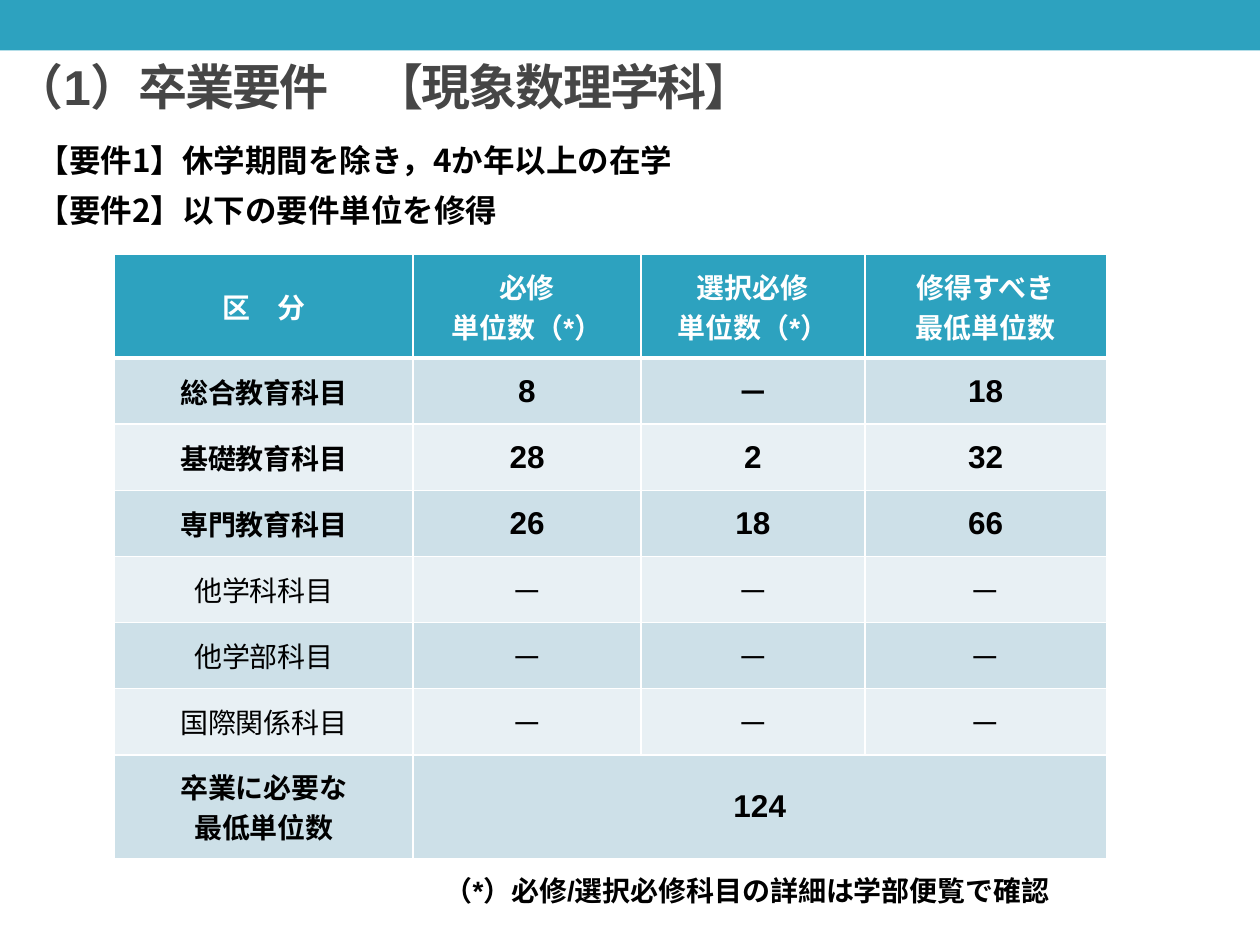
"""Build the slide on graduation requirements with its table of credits."""
from lxml import etree
from pptx import Presentation
from pptx import util as u
from pptx.dml.color import RGBColor
from pptx.enum import shapes, text
from pptx.oxml import ns

COLORS = {"teal": "2DA2BF", "title": "464646", "black": "000000",
          "white": "FFFFFF", "dark_band": "CDE0E8", "light_band": "E8F0F4"}
JAPANESE = "Noto Sans CJK JP"


def write(frame, content, size=16, color="black", bold=True, font="Arial",
          align=text.PP_ALIGN.LEFT, anchor=text.MSO_ANCHOR.TOP, spacing=None):
    frame.word_wrap = True
    frame.vertical_anchor = anchor
    for index, line in enumerate(content.split("\n")):
        paragraph = frame.add_paragraph() if index else frame.paragraphs[0]
        paragraph.alignment = align
        run = paragraph.add_run()
        run.text = line
        run.font.size = u.Pt(size)
        run.font.bold = bold
        run.font.name = font
        run.font.color.rgb = RGBColor.from_string(COLORS[color])
        properties = run.font._element
        etree.SubElement(properties, ns.qn("a:ea"), typeface=JAPANESE)
        if spacing is not None:
            properties.set("spc", str(spacing))


def add_borders(cell, bottom_width):
    properties = cell._tc.get_or_add_tcPr()
    widths = {"lnL": 1, "lnR": 1, "lnT": 1, "lnB": bottom_width}
    for position, (side, width) in enumerate(widths.items()):
        line = etree.Element(ns.qn(f"a:{side}"), w=str(u.Pt(width)))
        fill = etree.SubElement(line, ns.qn("a:solidFill"))
        etree.SubElement(fill, ns.qn("a:srgbClr"), val=COLORS["white"])
        properties.insert(position, line)


presentation = Presentation()
presentation.slide_width = u.Pt(720)
presentation.slide_height = u.Pt(540)
slide = presentation.slides.add_slide(presentation.slide_layouts[6])

banner = slide.shapes.add_shape(shapes.MSO_SHAPE.RECTANGLE, 0, 0, u.Pt(720), u.Pt(28.8))
banner.shadow.inherit = False
banner.fill.solid()
banner.fill.fore_color.rgb = RGBColor.from_string(COLORS["teal"])
banner.line.fill.background()

text_boxes = [
    ("（1）卒業要件　【現象数理学科】", (1.4, 25.9, 648, 46.8),
     dict(size=28, color="title", anchor=text.MSO_ANCHOR.MIDDLE, spacing=-100)),
    ("【要件1】休学期間を除き，4か年以上の在学", (14.4, 77, 623.5, 28.8),
     dict(size=18, font=JAPANESE)),
    ("【要件2】以下の要件単位を修得", (14.4, 105.8, 623.5, 28.8),
     dict(size=18, font=JAPANESE)),
    ("（*）必修/選択必修科目の詳細は学部便覧で確認", (247, 495.4, 459.4, 26.6), {}),
]
for content, box, style in text_boxes:
    shape = slide.shapes.add_textbox(*map(u.Pt, box))
    write(shape.text_frame, content, **style)

rows = [
    ("区　分", "必修\n単位数（*）", "選択必修\n単位数（*）", "修得すべき\n最低単位数"),
    ("総合教育科目", "8", "－", "18"),
    ("基礎教育科目", "28", "2", "32"),
    ("専門教育科目", "26", "18", "66"),
    ("他学科科目", "－", "－", "－"),
    ("他学部科目", "－", "－", "－"),
    ("国際関係科目", "－", "－", "－"),
    ("卒業に必要な\n最低単位数", "124", "", ""),
]
column_widths = [170.6, 130.1, 128, 138]
tall_row, short_row = 59.2, 37.8
last = len(rows) - 1
row_heights = [tall_row] + [short_row] * (last - 1) + [tall_row]
table = slide.shapes.add_table(len(rows), len(column_widths), u.Pt(65.5), u.Pt(145.4),
                               u.Pt(sum(column_widths)), u.Pt(sum(row_heights))).table
for column, width in zip(table.columns, column_widths):
    column.width = u.Pt(width)
for row, height in zip(table.rows, row_heights):
    row.height = u.Pt(height)
table.cell(last, 1).merge(table.cell(last, 3))

for row_index, values in enumerate(rows):
    is_header = row_index == 0
    band = "teal" if is_header else "dark_band" if row_index % 2 else "light_band"
    for column_index, value in enumerate(values):
        cell = table.cell(row_index, column_index)
        cell.fill.solid()
        cell.fill.fore_color.rgb = RGBColor.from_string(COLORS[band])
        add_borders(cell, 3 if is_header else 1)
        cell.vertical_anchor = text.MSO_ANCHOR.MIDDLE
        if value:
            write(cell.text_frame, value, size=16 if is_header or column_index == 0 else 18,
                  color="white" if is_header else "black",
                  bold=row_index not in (4, 5, 6), align=text.PP_ALIGN.CENTER,
                  anchor=None)

presentation.save("out.pptx")
